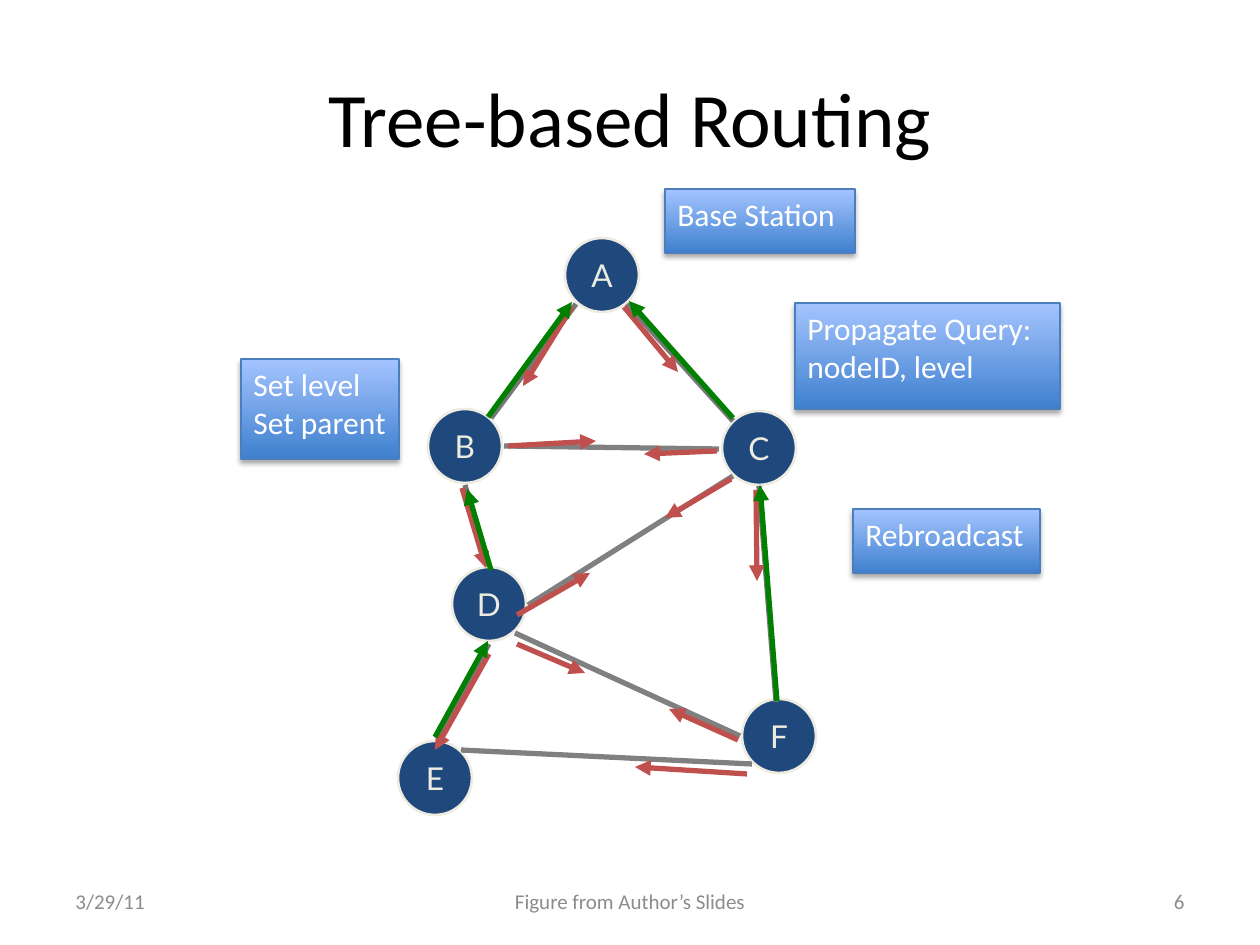
from lxml.etree import SubElement
from pptx import Presentation
from pptx.dml.color import RGBColor
from pptx.enum.shapes import MSO_CONNECTOR, MSO_SHAPE
from pptx.enum.text import MSO_ANCHOR, PP_ALIGN
from pptx.oxml.ns import qn
from pptx.util import Emu, Pt

EMU_PER_PX = 914400 / 126
NODE_SIZE = 74
NAVY, CREAM, WHITE, BLACK = "1F497D", "EEECE1", "FFFFFF", "000000"
TREE_GREY, GREY, RED, GREEN = "777777", "808080", "C0504D", "008000"
BOX_BOTTOM, BOX_TOP, BOX_LINE = "3F80CE", "A4C4FF", "4B7EBC"
FOOTER_GREY = "8C8C8C"

# name, centre x, centre y
NODES = [("A", 602, 275), ("B", 465, 446), ("C", 759, 448),
         ("D", 489, 604), ("F", 779, 736), ("E", 435, 778)]

# Lines run from x1, y1 to x2, y2; arrows point at the second end
TREE_LINKS = [(759, 486, 776, 702), (489, 644, 436, 738), (465, 485, 489, 566),
              (576, 304, 491, 418), (733, 421, 627, 304)]
OTHER_LINKS = [(752, 764, 461, 750), (733, 476, 528, 605),
               (515, 633, 740, 736), (719, 449, 504, 446)]
QUERIES = [(572, 307, 523, 386), (624, 307, 678, 372), (756, 490, 757, 581),
           (462, 488, 486, 568), (717, 451, 644, 454), (508, 446, 596, 441),
           (731, 479, 665, 518), (517, 615, 590, 573), (489, 654, 435, 750),
           (517, 644, 585, 673), (738, 740, 669, 709), (747, 774, 635, 767)]
PARENTS = [(435, 737, 488, 641), (777, 701, 760, 485), (491, 570, 467, 489),
           (488, 417, 572, 302), (733, 418, 629, 301)]

LABELS = [("Base Station", 665, 189, 190, 64),
          ("Propagate Query:\nnodeID, level", 795, 303, 265, 106),
          ("Set level\nSet parent", 241, 359, 158, 100),
          ("Rebroadcast", 853, 509, 187, 64)]

FOOTERS = [("3/29/11", 63, 294, PP_ALIGN.LEFT),
           ("Figure from Author’s Slides", 430, 400, PP_ALIGN.CENTER),
           ("6", 903, 294, PP_ALIGN.RIGHT)]


def px(*lengths):
    return [Emu(round(n * EMU_PER_PX)) for n in lengths]


def rgb(hex_color):
    return RGBColor.from_string(hex_color)


def set_text(shape, text, size, color, align, anchor, font="Calibri", wrap=True):
    tf = shape.text_frame
    tf.text = text
    tf.word_wrap = wrap
    tf.vertical_anchor = anchor
    for p in tf.paragraphs:
        p.alignment = align
        p.font.name = font
        p.font.size = Pt(size)
        p.font.color.rgb = rgb(color)


def add_title(s, text):
    title = s.shapes.title
    title.left, title.top, title.width, title.height = px(63, 38, 1134, 158)
    set_text(title, text, 44, BLACK, PP_ALIGN.CENTER, MSO_ANCHOR.MIDDLE)


def add_node(s, name, x, y):
    r = NODE_SIZE / 2
    node = s.shapes.add_shape(MSO_SHAPE.OVAL, *px(x - r, y - r, NODE_SIZE, NODE_SIZE))
    node.shadow.inherit = False
    node.fill.solid()
    node.fill.fore_color.rgb = rgb(NAVY)
    node.line.color.rgb = rgb(CREAM)
    node.line.width = Pt(1.5)
    set_text(node, name, 18, CREAM, PP_ALIGN.CENTER, MSO_ANCHOR.MIDDLE, "Lato", False)


def add_line(s, ends, color, arrow):
    line = s.shapes.add_connector(MSO_CONNECTOR.STRAIGHT, *px(*ends))
    line.line.color.rgb = rgb(color)
    line.line.width = Pt(3)
    if arrow:
        SubElement(line.line._get_or_add_ln(), qn("a:tailEnd"), type="triangle")
    SubElement(line._element.spPr, qn("a:effectLst"))


def add_drop_shadow(shape):
    shape.shadow.inherit = False
    effects = shape._element.spPr.find(qn("a:effectLst"))
    shadow = SubElement(effects, qn("a:outerShdw"), blurRad=str(Pt(3.1)),
                        dist=str(Pt(1.8)), dir="5400000", rotWithShape="0")
    color = SubElement(shadow, qn("a:srgbClr"), val=BLACK)
    SubElement(color, qn("a:alpha"), val="35000")


def add_label(s, text, *box):
    label = s.shapes.add_shape(MSO_SHAPE.RECTANGLE, *px(*box))
    label.fill.gradient()
    label.fill.gradient_angle = 90
    for stop, color in zip(label.fill.gradient_stops, (BOX_BOTTOM, BOX_TOP)):
        stop.color.rgb = rgb(color)
    label.line.color.rgb = rgb(BOX_LINE)
    label.line.width = Pt(0.75)
    add_drop_shadow(label)
    set_text(label, text, 18, WHITE, PP_ALIGN.LEFT, MSO_ANCHOR.TOP)


def add_footer(s, text, left, width, align):
    box = s.shapes.add_textbox(*px(left, 876, width, 50))
    set_text(box, text, 12, FOOTER_GREY, align, MSO_ANCHOR.MIDDLE)


def main():
    prs = Presentation()
    prs.slide_width, prs.slide_height = px(1260, 945)
    s = prs.slides.add_slide(prs.slide_layouts[5])
    add_title(s, "Tree-based Routing")
    for node in NODES:
        add_node(s, *node)
    for lines, color, arrow in [(TREE_LINKS, TREE_GREY, False),
                                (OTHER_LINKS, GREY, False),
                                (QUERIES, RED, True),
                                (PARENTS, GREEN, True)]:
        for ends in lines:
            add_line(s, ends, color, arrow)
    for label in LABELS:
        add_label(s, *label)
    for footer in FOOTERS:
        add_footer(s, *footer)
    prs.save("out.pptx")


if __name__ == "__main__":
    main()
